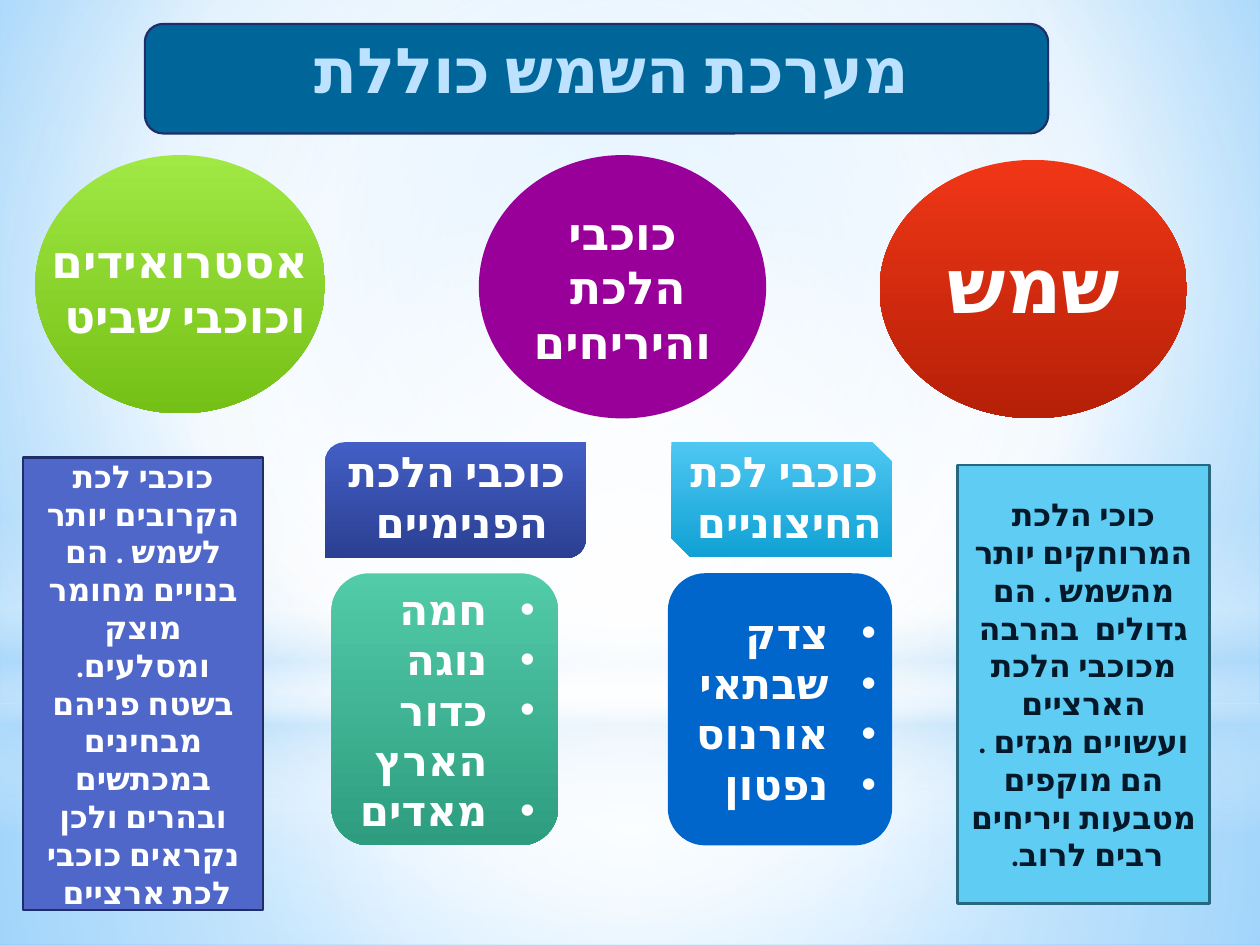
from dataclasses import dataclass

from lxml import etree
from pptx import Presentation
from pptx.dml.color import RGBColor
from pptx.enum.shapes import MSO_SHAPE
from pptx.enum.text import MSO_ANCHOR, MSO_AUTO_SIZE, PP_ALIGN
from pptx.oxml.ns import qn
from pptx.util import Pt

RECTANGLE = MSO_SHAPE.RECTANGLE
ROUNDED = MSO_SHAPE.ROUNDED_RECTANGLE
OVAL = MSO_SHAPE.OVAL
SNIPPED = MSO_SHAPE.SNIP_2_DIAG_RECTANGLE
DIAGONAL_ROUND = MSO_SHAPE.ROUND_2_DIAG_RECTANGLE
MIDDLE = MSO_ANCHOR.MIDDLE
TOP = MSO_ANCHOR.TOP
CENTER = PP_ALIGN.CENTER
RIGHT = PP_ALIGN.RIGHT
GROW = MSO_AUTO_SIZE.SHAPE_TO_FIT_TEXT

FONT = "Lato"
WHITE = RGBColor(0xFF, 0xFF, 0xFF)
HAZE = RGBColor(0xB4, 0xDC, 0xFA)
SKY = RGBColor(0x9E, 0xD5, 0xFF)
SKY_EDGE = RGBColor(0x5B, 0xB9, 0xFF)
TEAL = RGBColor(0x00, 0x66, 0x99)
NAVY = RGBColor(0x1F, 0x2E, 0x69)
TITLE_TEXT = RGBColor(0xBD, 0xE2, 0xFF)
TITLE_OUTLINE = RGBColor(0x17, 0x20, 0x4F)
RED = RGBColor(0xF0, 0x36, 0x17)
DARK_RED = RGBColor(0xB5, 0x20, 0x07)
CYAN = RGBColor(0x4E, 0xC7, 0xF2)
DARK_CYAN = RGBColor(0x11, 0xA1, 0xD4)
LIME = RGBColor(0xA0, 0xE8, 0x44)
DARK_LIME = RGBColor(0x75, 0xC0, 0x16)
INDIGO = RGBColor(0x43, 0x5E, 0xC5)
DARK_INDIGO = RGBColor(0x2B, 0x40, 0x92)
MINT = RGBColor(0x52, 0xCB, 0xA9)
DARK_MINT = RGBColor(0x2E, 0x9D, 0x7F)
BLUE = RGBColor(0x00, 0x66, 0xCC)
PURPLE = RGBColor(0x99, 0x00, 0x99)
LIGHT_CYAN = RGBColor(0x5E, 0xCC, 0xF3)
CYAN_BORDER = RGBColor(0x25, 0x68, 0x80)
PERIWINKLE = RGBColor(0x4E, 0x67, 0xC8)
INK = RGBColor(0x03, 0x18, 0x28)


@dataclass(frozen=True)
class Stop:
    position: int
    color: RGBColor
    opacity: int = 100


@dataclass(frozen=True)
class Gradient:
    stops: tuple[Stop, ...]
    focus: tuple[int, int, int, int] | None = None


@dataclass(frozen=True)
class Item:
    left: float
    top: float
    width: float
    height: float
    geometry: MSO_SHAPE | None = None
    fill: RGBColor | Gradient | None = None
    border: RGBColor | None = None
    text: str = ""
    size: int = 24
    color: RGBColor = WHITE
    outline: RGBColor | None = None
    bullets: bool = False


def downward(start: RGBColor, end: RGBColor) -> Gradient:
    return Gradient((Stop(0, start), Stop(100, end)))


CENTRE = (50, 50, 50, 50)
BACKGROUND = Gradient((Stop(0, SKY), Stop(60, WHITE), Stop(100, SKY_EDGE)), (20, 10, 20, 60))
FLOOR = Gradient((Stop(0, WHITE, 91), Stop(37, WHITE, 76), Stop(100, HAZE, 79)), CENTRE)
WALL = Gradient((Stop(0, WHITE, 89), Stop(48, WHITE, 62), Stop(100, HAZE, 79)), CENTRE)
HORIZON = Gradient((Stop(0, WHITE, 0), Stop(29, WHITE, 30), Stop(45, HAZE, 40),
                    Stop(55, WHITE, 26), Stop(65, HAZE, 60), Stop(100, WHITE, 0)))
GLOW = Gradient((Stop(0, WHITE), Stop(56, WHITE, 0)), CENTRE)

OUTER_FACTS = ("כוכי הלכת המרוחקים יותר מהשמש . הם גדולים  בהרבה מכוכבי הלכת הארציים "
               "ועשויים מגזים . הם מוקפים מטבעות ויריחים רבים לרוב. ")
INNER_FACTS = ("כוכבי לכת הקרובים יותר לשמש . הם בנויים מחומר מוצק ומסלעים. בשטח פניהם "
               "מבחינים במכתשים ובהרים ולכן נקראים כוכבי לכת ארציים ")

ITEMS = (
    Item(0, 401.8, 720, 138.2, RECTANGLE, FLOOR),
    Item(0, 0, 720, 401.8, RECTANGLE, WALL),
    Item(0, 296.6, 720, 180, RECTANGLE, HORIZON),
    Item(0, 126, 720, 401.8, OVAL, GLOW),
    Item(82.8, 13.7, 516.2, 62.6, ROUNDED, TEAL, NAVY),
    Item(502.6, 91.4, 175.7, 147.6, OVAL, downward(RED, DARK_RED)),
    Item(383.6, 252.7, 126, 65.5, SNIPPED, downward(CYAN, DARK_CYAN)),
    Item(95.8, 13.7, 499, 51.1, text="מערכת השמש כוללת ", size=36,
         color=TITLE_TEXT, outline=TITLE_OUTLINE),
    Item(529.2, 131.8, 123.1, 60.5, text="שמש ", size=44),
    Item(20.2, 88.6, 165.6, 147.6, OVAL, downward(LIME, DARK_LIME)),
    Item(13, 129.6, 179.3, 70.6, text="אסטרואידים וכוכבי שביט ", size=26),
    Item(185.8, 252.7, 149, 66.2, DIAGONAL_ROUND, downward(INDIGO, DARK_INDIGO)),
    Item(385.2, 251.3, 126, 65.5, text="כוכבי לכת החיצוניים "),
    Item(187.2, 251.3, 147.6, 65.5, text="כוכבי הלכת הפנימיים "),
    Item(381.6, 327.6, 128.2, 155.5, ROUNDED, BLUE),
    Item(377.3, 343.4, 130.3, 123.8, text="צדק \nשבתאי \nאורנוס\nנפטון ", bullets=True),
    Item(189.4, 327.6, 129.6, 155.5, ROUNDED, downward(MINT, DARK_MINT),
         text="חמה \nנוגה \nכדור הארץ\nמאדים ", bullets=True),
    Item(547.2, 265.7, 144, 250.6, RECTANGLE, LIGHT_CYAN, CYAN_BORDER,
         OUTER_FACTS, 18, INK),
    Item(13, 261.4, 137.5, 258.5, RECTANGLE, PERIWINKLE, NAVY, INNER_FACTS, 18),
    Item(273.6, 88.6, 164.2, 150.5, OVAL, PURPLE, text="כוכבי הלכת \nוהיריחים ", size=26),
)


def add_color(parent, color: RGBColor, opacity: int = 100) -> None:
    node = etree.SubElement(parent, qn("a:srgbClr"), val=str(color))
    if opacity < 100:
        etree.SubElement(node, qn("a:alpha"), val=str(opacity * 1000))


def paint_gradient(properties, gradient: Gradient) -> None:
    solid = properties.find(qn("a:solidFill"))
    node = etree.Element(qn("a:gradFill"), rotWithShape="1")
    stops = etree.SubElement(node, qn("a:gsLst"))
    for stop in gradient.stops:
        stop_node = etree.SubElement(stops, qn("a:gs"), pos=str(stop.position * 1000))
        add_color(stop_node, stop.color, stop.opacity)
    if gradient.focus:
        circle = etree.SubElement(node, qn("a:path"), path="circle")
        sides = {side: str(share * 1000) for side, share in zip("ltrb", gradient.focus)}
        etree.SubElement(circle, qn("a:fillToRect"), sides)
    else:
        etree.SubElement(node, qn("a:lin"), ang="5400000", scaled="0")
    properties.replace(solid, node)


def write_text(shape, text: str, *, size: int, color: RGBColor, anchor: MSO_ANCHOR,
               outline: RGBColor | None = None, bullets: bool = False) -> None:
    frame = shape.text_frame
    frame.word_wrap = True
    frame.vertical_anchor = anchor
    for index, line in enumerate(text.split("\n")):
        paragraph = frame.paragraphs[0] if index == 0 else frame.add_paragraph()
        paragraph.alignment = RIGHT if bullets else CENTER
        properties = paragraph._p.get_or_add_pPr()
        properties.set("rtl", "1")
        if bullets:
            properties.set("marL", str(Pt(27)))
            properties.set("indent", str(-Pt(27)))
            etree.SubElement(properties, qn("a:buFont"), typeface="Arial")
            etree.SubElement(properties, qn("a:buChar"), char="•")
        run = paragraph.add_run()
        run.text = line
        run.font.size = Pt(size)
        run.font.bold = True
        run.font.name = FONT
        run.font.color.rgb = color
        run_properties = run._r.get_or_add_rPr()
        run_properties.set("lang", "he-IL")
        etree.SubElement(run_properties, qn("a:cs"), typeface=FONT)
        if outline:
            stroke = etree.Element(qn("a:ln"), w=str(Pt(1)))
            add_color(etree.SubElement(stroke, qn("a:solidFill")), outline)
            run_properties.insert(0, stroke)


def draw_item(slide, item: Item) -> None:
    box = [Pt(length) for length in (item.left, item.top, item.width, item.height)]
    if item.geometry is None:
        shape = slide.shapes.add_textbox(*box)
        shape.text_frame.auto_size = GROW
    else:
        shape = slide.shapes.add_shape(item.geometry, *box)
        shape.shadow.inherit = False
        shape.fill.solid()
        if isinstance(item.fill, Gradient):
            paint_gradient(shape._element.spPr, item.fill)
        else:
            shape.fill.fore_color.rgb = item.fill
        if item.border is None:
            shape.line.fill.background()
        else:
            shape.line.color.rgb = item.border
            shape.line.width = Pt(1.25)
    if item.text:
        write_text(shape, item.text, size=item.size, color=item.color,
                   anchor=MIDDLE if item.geometry is not None else TOP,
                   outline=item.outline, bullets=item.bullets)


def main() -> None:
    presentation = Presentation()
    presentation.slide_width = Pt(720)
    presentation.slide_height = Pt(540)
    slide = presentation.slides.add_slide(presentation.slide_layouts[6])
    slide.background.fill.solid()
    paint_gradient(next(slide._element.iter(qn("p:bgPr"))), BACKGROUND)
    for item in ITEMS:
        draw_item(slide, item)
    presentation.save("out.pptx")


if __name__ == "__main__":
    main()
